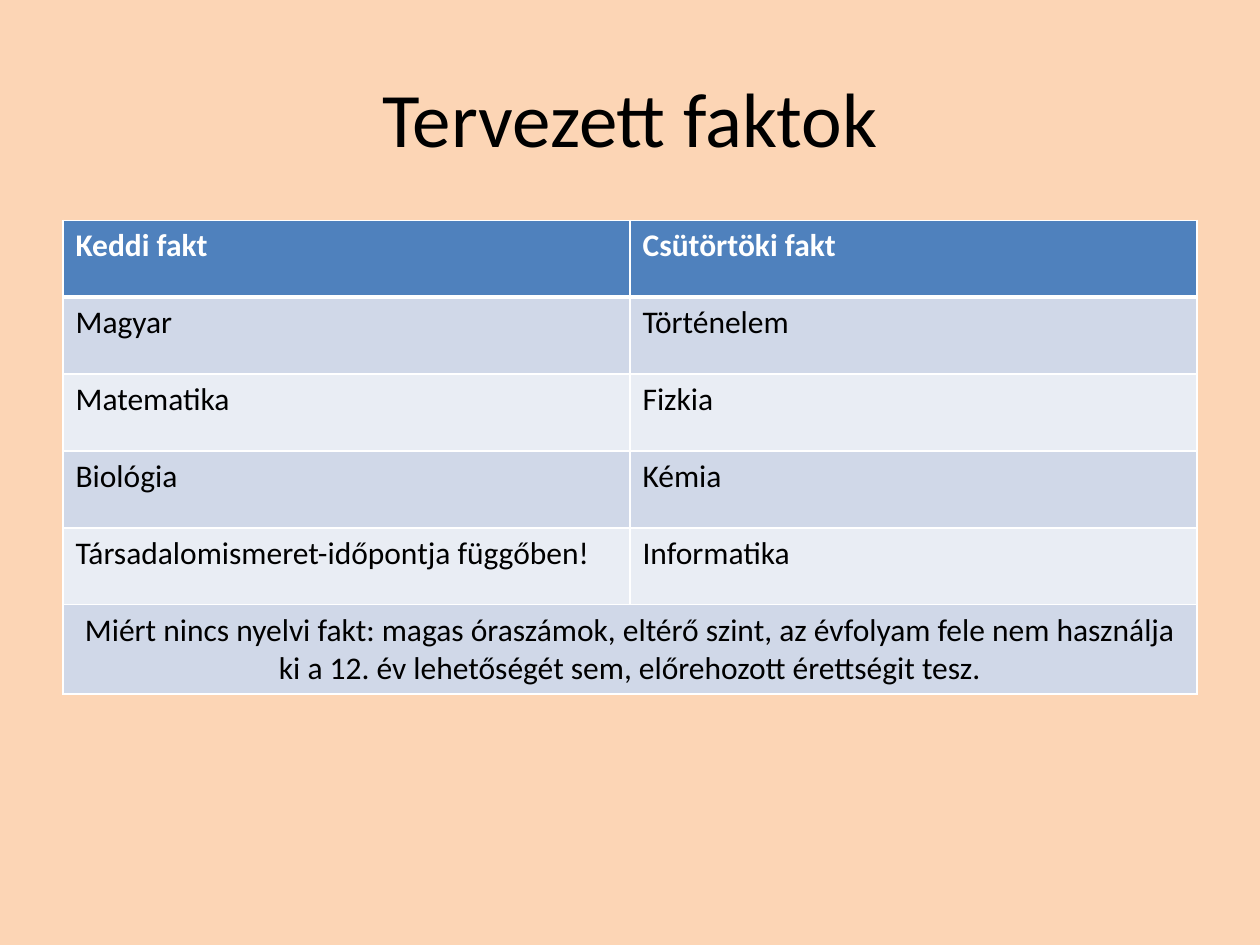
import pptx
import pptx.dml.color
import pptx.enum.text
import pptx.oxml.ns
import pptx.util
from lxml import etree
from pptx.util import Cm

ALIGN = pptx.enum.text.PP_ALIGN
ANCHOR = pptx.enum.text.MSO_ANCHOR
FONT = "Calibri"
COLORS = {
    "background": "FCD5B5",
    "header": "4F81BD",
    "odd_row": "D0D8E8",
    "even_row": "E9EDF4",
    "white": "FFFFFF",
    "black": "000000",
}
ROWS = [
    ("Keddi fakt", "Csütörtöki fakt"),
    ("Magyar", "Történelem"),
    ("Matematika", "Fizkia"),
    ("Biológia", "Kémia"),
    ("Társadalomismeret-időpontja függőben!", "Informatika"),
]
NOTE = ("Miért nincs nyelvi fakt: magas óraszámok, eltérő szint, az évfolyam "
        "fele nem használja ki a 12. év lehetőségét sem, előrehozott "
        "érettségit tesz.")


def rgb(name):
    return pptx.dml.color.RGBColor.from_string(COLORS[name])


def set_text(tf, text, size=18, color="black", bold=False, align=ALIGN.LEFT):
    p = tf.paragraphs[0]
    p.alignment = align
    r = p.add_run()
    r.text = text
    r.font.name = FONT
    r.font.size = pptx.util.Pt(size)
    r.font.bold = bold
    r.font.color.rgb = rgb(color)


def set_borders(cell, bottom=1, top=1):
    """Draw white cell borders; widths are in points."""
    qn = pptx.oxml.ns.qn
    tcPr = cell._tc.get_or_add_tcPr()
    for side, width in (("L", 1), ("R", 1), ("T", top), ("B", bottom)):
        ln = etree.SubElement(tcPr, qn(f"a:ln{side}"), w=str(pptx.util.Pt(width)))
        fill = etree.SubElement(ln, qn("a:solidFill"))
        etree.SubElement(fill, qn("a:srgbClr"), val=COLORS["white"])


def format_cell(cell, row):
    set_borders(cell, bottom=3 if row == 0 else 1, top=3 if row == 1 else 1)
    cell.fill.solid()
    band = "odd_row" if row % 2 else "even_row"
    cell.fill.fore_color.rgb = rgb("header" if row == 0 else band)


def add_title(s, text):
    sp = s.shapes.title
    sp.left, sp.top, sp.width, sp.height = Cm(1.27), Cm(0.76), Cm(22.86), Cm(3.18)
    sp.text_frame.vertical_anchor = ANCHOR.MIDDLE
    set_text(sp.text_frame, text, size=44, align=ALIGN.CENTER)


def add_course_table(s):
    count = len(ROWS) + 1
    table = s.shapes.add_table(count, 2, Cm(1.27), Cm(4.44),
                               Cm(22.86), Cm(1.55) * count).table
    for i in range(count):
        for cell in table.rows[i].cells:
            format_cell(cell, i)
    for i, texts in enumerate(ROWS):
        for cell, text in zip(table.rows[i].cells, texts):
            set_text(cell.text_frame, text, bold=i == 0,
                     color="white" if i == 0 else "black")
    note = table.cell(count - 1, 0)
    note.merge(table.cell(count - 1, 1))
    set_text(note.text_frame, NOTE, align=ALIGN.CENTER)


def main():
    prs = pptx.Presentation()
    prs.slide_width, prs.slide_height = Cm(25.4), Cm(19.05)
    s = prs.slides.add_slide(prs.slide_layouts[5])
    s.background.fill.solid()
    s.background.fill.fore_color.rgb = rgb("background")
    add_title(s, "Tervezett faktok")
    add_course_table(s)
    prs.save("out.pptx")


if __name__ == "__main__":
    main()
